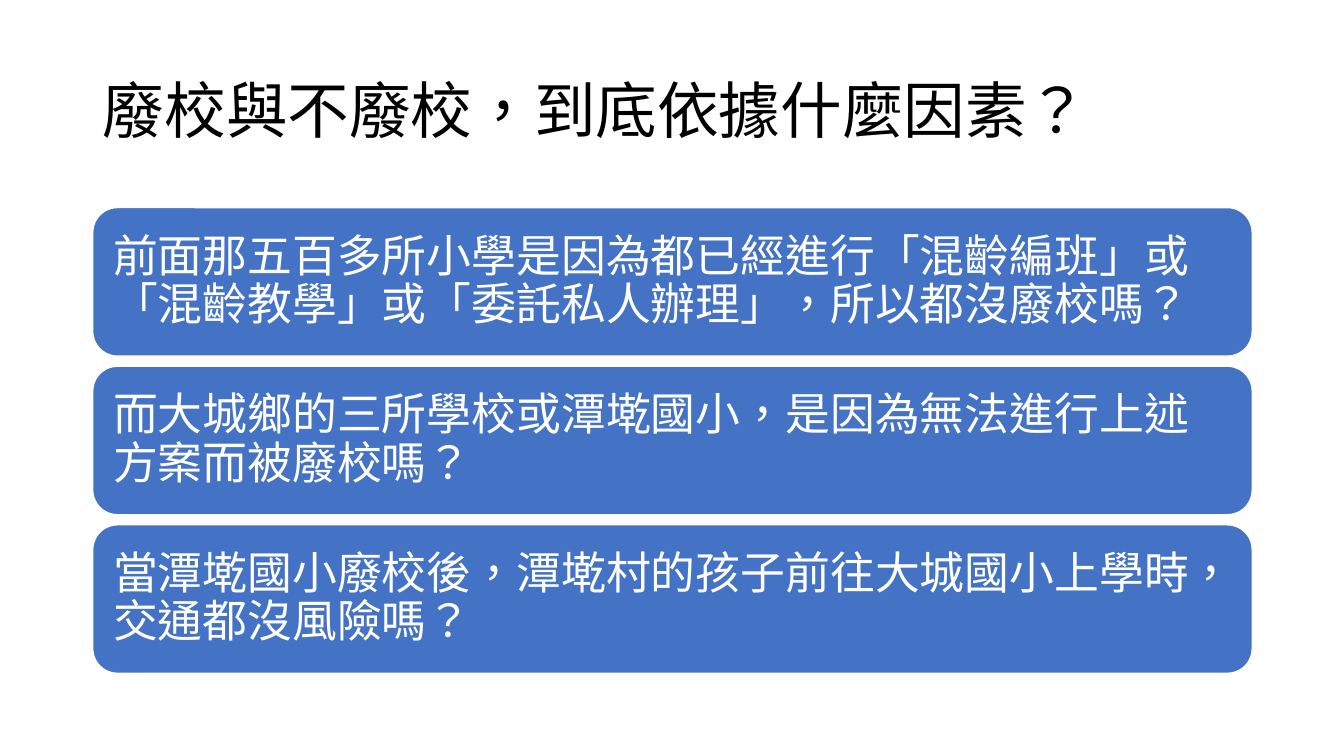
import dataclasses

import pptx
import pptx.dml.color
import pptx.enum.lang
import pptx.enum.shapes
import pptx.enum.text
import pptx.util

PX = 9144  # 100 px to the inch


@dataclasses.dataclass(frozen=True)
class Theme:
    font: str = "Calibri"
    ink: str = "000000"
    paper: str = "FFFFFF"
    card: str = "4472C4"
    head: int = 44
    body: int = 32


THEME = Theme()
TITLE = "廢校與不廢校，到底依據什麼因素？"
ASKS = [
    "前面那五百多所小學是因為都已經進行「混齡編班」或「混齡教學」或「委託私人辦理」，所以都沒廢校嗎？",
    "而大城鄉的三所學校或潭墘國小，是因為無法進行上述方案而被廢校嗎？",
    "當潭墘國小廢校後，潭墘村的孩子前往大城國小上學時，交通都沒風險嗎？",
]


def rgb(code):
    return pptx.dml.color.RGBColor.from_string(code)


def write(shape, text, size, color, pad):
    """Fill a shape with one left-aligned paragraph; pad is (x, y) in px."""
    frame = shape.text_frame
    frame.word_wrap = True
    frame.auto_size = pptx.enum.text.MSO_AUTO_SIZE.NONE
    frame.vertical_anchor = pptx.enum.text.MSO_ANCHOR.MIDDLE
    frame.margin_left = frame.margin_right = pad[0] * PX
    frame.margin_top = frame.margin_bottom = pad[1] * PX
    para = frame.paragraphs[0]
    para.alignment = pptx.enum.text.PP_ALIGN.LEFT
    para.line_spacing = 0.9
    run = para.add_run()
    run.text = text
    run.font.name = THEME.font
    run.font.size = pptx.util.Pt(size)
    run.font.color.rgb = rgb(color)
    run.font.language_id = pptx.enum.lang.MSO_LANGUAGE_ID.TRADITIONAL_CHINESE


def head(slide, box):
    title = slide.shapes.title
    title.left, title.top, title.width, title.height = (n * PX for n in box)
    write(title, TITLE, size=THEME.head, color=THEME.ink, pad=(10, 5))


def cards(slide, box, gap):
    """Stack the questions in equal cards that fill the box."""
    left, top, width, height = box
    tall = (height - gap * (len(ASKS) - 1)) / len(ASKS)
    for row, ask in enumerate(ASKS):
        place = (left, top + row * (tall + gap), width, tall)
        card = slide.shapes.add_shape(
            pptx.enum.shapes.MSO_SHAPE.ROUNDED_RECTANGLE,
            *(round(n * PX) for n in place))
        card.shadow.inherit = False
        card.fill.solid()
        card.fill.fore_color.rgb = rgb(THEME.card)
        card.line.color.rgb = rgb(THEME.paper)
        card.line.width = pptx.util.Pt(1)
        write(card, ask, size=THEME.body, color=THEME.paper, pad=(13, 13))


def main():
    deck = pptx.Presentation()
    deck.slide_width, deck.slide_height = 1333 * PX, 750 * PX
    slide = deck.slides.add_slide(deck.slide_layouts[5])
    head(slide, (92, 40, 1150, 145))
    cards(slide, (92, 206, 1150, 462), gap=10)
    deck.save("out.pptx")


if __name__ == "__main__":
    main()
